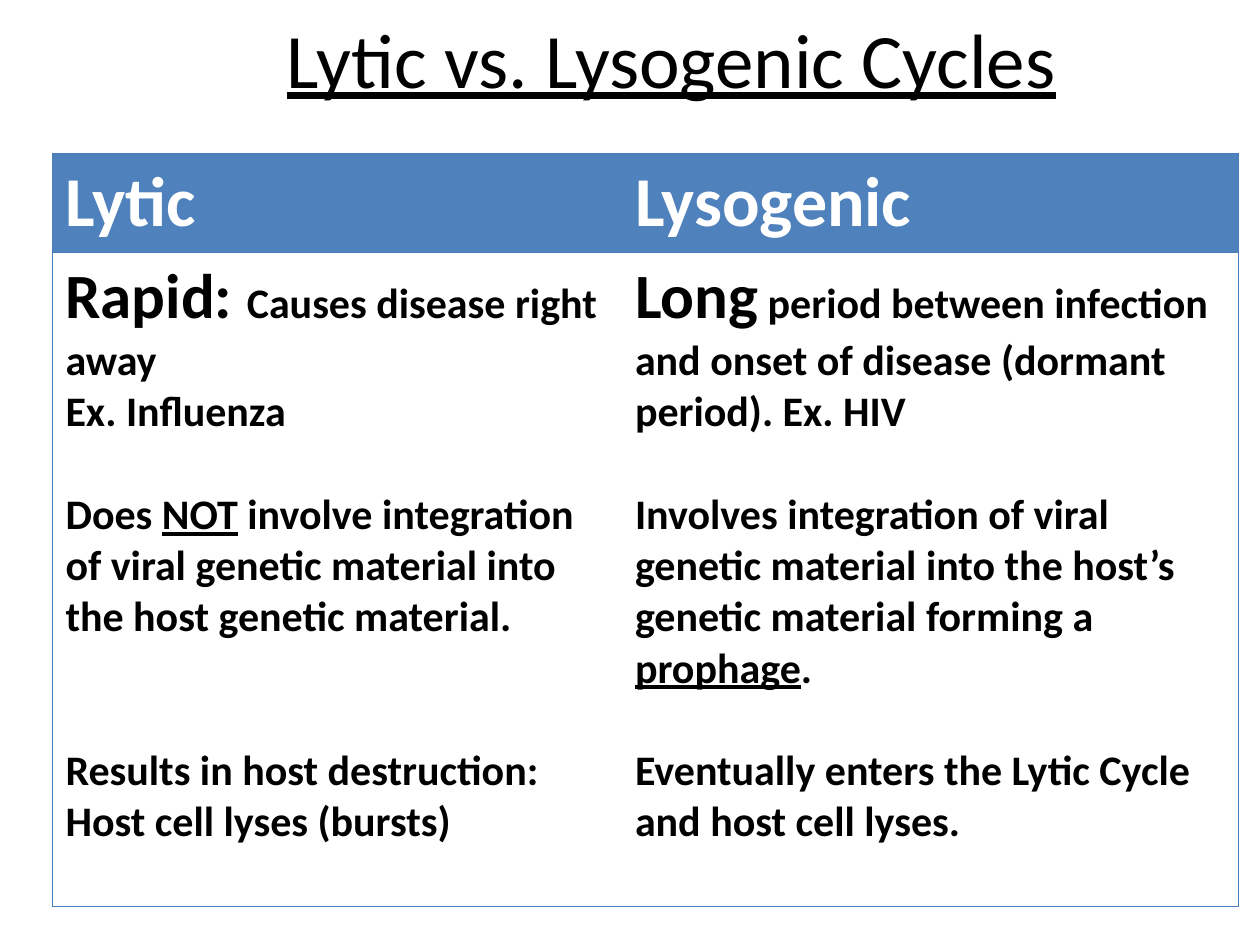
from dataclasses import dataclass

from lxml.etree import SubElement
from pptx import Presentation
from pptx.dml.color import RGBColor
from pptx.enum.text import MSO_ANCHOR, PP_ALIGN
from pptx.oxml.ns import qn
from pptx.slide import Slide
from pptx.table import _Cell
from pptx.text.text import _Paragraph
from pptx.util import Inches, Pt

SLIDE_WIDTH, SLIDE_HEIGHT = Inches(10), Inches(7.5)


@dataclass(frozen=True)
class Theme:
    font: str = "Calibri"
    ink: str = "000000"
    paper: str = "FFFFFF"
    header: str = "4F81BD"
    border: str = "4B7EBC"
    border_width: float = 0.75
    title_size: int = 44
    header_size: int = 40
    lead_size: int = 36
    body_size: int = 24
    line_pitch: float = 1.22


THEME = Theme()


@dataclass(frozen=True)
class Span:
    text: str
    size: int = THEME.body_size
    color: str = THEME.ink
    bold: bool = True
    underline: bool = False


@dataclass(frozen=True)
class Line:
    """A paragraph, set lower by a number of body lines."""
    spans: tuple[Span, ...]
    lines_before: int = 0


@dataclass(frozen=True)
class Cycle:
    name: str
    width: float  # share of the slide's width
    facts: tuple[Line, ...]


TABLE_LEFT, TABLE_TOP = 0.042, 0.163
HEADER_HEIGHT, BODY_HEIGHT = 0.104, 0.692

CYCLES = (
    Cycle("Lytic", 0.452, (
        Line((Span("Rapid: ", THEME.lead_size), Span("Causes disease right away"))),
        Line((Span("Ex. Influenza"),)),
        Line((Span("Does "), Span("NOT", underline=True),
              Span(" involve integration of viral genetic material into "
                   "the host genetic material.")), lines_before=1),
        Line((Span("Results in host destruction:"),), lines_before=2),
        Line((Span("Host cell lyses (bursts)"),)),
    )),
    Cycle("Lysogenic", 0.489, (
        Line((Span("Long", THEME.lead_size),
              Span(" period between infection and onset of disease "
                   "(dormant period). Ex. HIV"))),
        Line((Span("Involves integration of viral genetic material into the "
                   "host’s genetic material forming a "),
              Span("prophage", underline=True), Span(".")), lines_before=1),
        Line((Span("Eventually enters the Lytic Cycle and host cell lyses."),),
             lines_before=1),
    )),
)


def across(share: float) -> int:
    return round(SLIDE_WIDTH * share)


def down(share: float) -> int:
    return round(SLIDE_HEIGHT * share)


def add_span(paragraph: _Paragraph, span: Span) -> None:
    run = paragraph.add_run()
    run.text = span.text
    run.font.name = THEME.font
    run.font.size = Pt(span.size)
    run.font.bold = span.bold
    run.font.underline = span.underline
    run.font.color.rgb = RGBColor.from_string(span.color)


def set_borders(cell: _Cell, drawn: str) -> None:
    """Draw the sides named by the letters L, R, T and B; clear the others."""
    properties = cell._tc.get_or_add_tcPr()
    for side in "LRTB":
        line = SubElement(properties, qn(f"a:ln{side}"), w=str(Pt(THEME.border_width)))
        if side in drawn:
            fill = SubElement(line, qn("a:solidFill"))
            SubElement(fill, qn("a:srgbClr"), val=THEME.border)
        else:
            SubElement(line, qn("a:noFill"))


def fill_cell(cell: _Cell, lines: tuple[Line, ...], color: str, borders: str) -> None:
    set_borders(cell, borders)
    cell.fill.solid()
    cell.fill.fore_color.rgb = RGBColor.from_string(color)
    frame = cell.text_frame
    for index, line in enumerate(lines):
        paragraph = frame.add_paragraph() if index else frame.paragraphs[0]
        paragraph.space_before = Pt(line.lines_before * THEME.body_size * THEME.line_pitch)
        for span in line.spans:
            add_span(paragraph, span)


def add_title(slide: Slide, text: str) -> None:
    box = slide.shapes.add_textbox(across(0.083), down(-0.023), across(0.9), down(0.167))
    frame = box.text_frame
    frame.word_wrap = True
    frame.vertical_anchor = MSO_ANCHOR.MIDDLE
    paragraph = frame.paragraphs[0]
    paragraph.alignment = PP_ALIGN.CENTER
    add_span(paragraph, Span(text, THEME.title_size, bold=False, underline=True))


def add_comparison(slide: Slide, cycles: tuple[Cycle, ...]) -> None:
    table = slide.shapes.add_table(
        2, len(cycles), across(TABLE_LEFT), down(TABLE_TOP),
        across(sum(cycle.width for cycle in cycles)),
        down(HEADER_HEIGHT + BODY_HEIGHT)).table
    table.horz_banding = False
    for row, height in zip(table.rows, (HEADER_HEIGHT, BODY_HEIGHT)):
        row.height = down(height)
    for column, cycle in enumerate(cycles):
        table.columns[column].width = across(cycle.width)
        outer = ("L" if column == 0 else "") + ("R" if column == len(cycles) - 1 else "")
        heading = Line((Span(cycle.name, THEME.header_size, THEME.paper),))
        fill_cell(table.cell(0, column), (heading,), THEME.header, outer + "TB")
        fill_cell(table.cell(1, column), cycle.facts, THEME.paper, outer + "TB")


def main() -> None:
    deck = Presentation()
    deck.slide_width, deck.slide_height = SLIDE_WIDTH, SLIDE_HEIGHT
    slide = deck.slides.add_slide(deck.slide_layouts[6])
    add_title(slide, "Lytic vs. Lysogenic Cycles")
    add_comparison(slide, CYCLES)
    deck.save("out.pptx")


if __name__ == "__main__":
    main()
